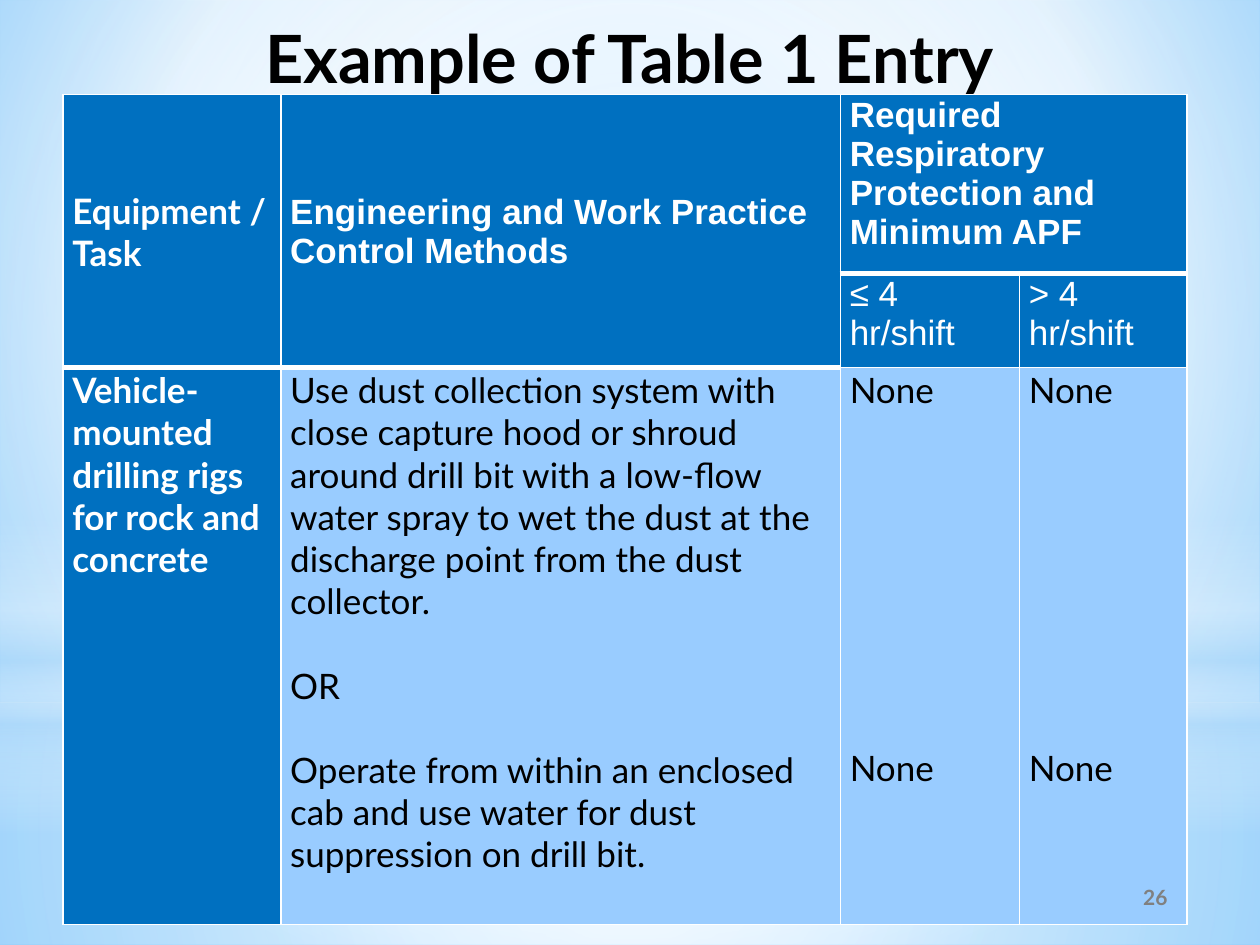
from pptx import Presentation
from pptx.dml.color import RGBColor
from pptx.enum.shapes import MSO_SHAPE
from pptx.enum.text import MSO_ANCHOR, PP_ALIGN
from pptx.oxml import parse_xml
from pptx.oxml.ns import nsdecls, qn
from pptx.util import Cm, Pt

COLORS = {
    "sky": "9ED5FF", "azure": "5BB9FF", "mist": "B4DCFA", "white": "FFFFFF",
    "header": "0070C0", "body": "99CCFF", "ink": "000000", "number": "808080",
}
CENTER_FOCUS = (50, 50, 50, 50)
COLUMNS = (4.39, 11.28, 3.61, 3.38)
ROWS = (3.61, 1.9, 11.23)
LINE = 24


def gradient_xml(stops, focus=None):
    """Return a gradient: circular around a focus, or top to bottom without one."""
    marks = "".join(
        f'<a:gs pos="{place * 1000}"><a:srgbClr val="{COLORS[color]}">'
        f'<a:alpha val="{opacity * 1000}"/></a:srgbClr></a:gs>'
        for place, color, opacity in stops)
    if focus:
        sides = " ".join(f'{side}="{value * 1000}"' for side, value in zip("ltrb", focus))
        course = f'<a:path path="circle"><a:fillToRect {sides}/></a:path>'
    else:
        course = '<a:lin ang="5400000" scaled="0"/>'
    return parse_xml(f'<a:gradFill {nsdecls("a")} rotWithShape="1">'
                     f'<a:gsLst>{marks}</a:gsLst>{course}</a:gradFill>')


def fill_gradient(fill, properties, stops, focus=None):
    """Fill a shape or background with a gradient."""
    fill.solid()
    properties.replace(properties.find(qn("a:solidFill")), gradient_xml(stops, focus))


def add_glow(slide, kind, top, height, stops, focus=None):
    """Add a translucent full-width gradient shape."""
    glow = slide.shapes.add_shape(kind, 0, Cm(top), Cm(25.4), Cm(height))
    glow.shadow.inherit = False
    glow.line.fill.background()
    fill_gradient(glow.fill, glow.element.find(qn("p:spPr")), stops, focus)


def add_backdrop(slide):
    """Paint the background and its layers of light."""
    fill_gradient(slide.background.fill, slide.element.find(".//" + qn("p:bgPr")),
                  ((0, "sky", 100), (60, "white", 100), (100, "azure", 100)),
                  (20, 10, 20, 60))
    add_glow(slide, MSO_SHAPE.RECTANGLE, 14.17, 4.88,
             ((0, "white", 91), (37, "white", 76), (100, "mist", 79)), CENTER_FOCUS)
    add_glow(slide, MSO_SHAPE.RECTANGLE, 0, 14.17,
             ((0, "white", 89), (48, "white", 62), (100, "mist", 79)), CENTER_FOCUS)
    add_glow(slide, MSO_SHAPE.RECTANGLE, 10.46, 6.35,
             ((0, "white", 0), (29, "white", 30), (45, "mist", 40),
              (55, "white", 26), (65, "mist", 60), (100, "white", 0)))
    add_glow(slide, MSO_SHAPE.OVAL, 4.45, 14.17,
             ((0, "white", 100), (56, "white", 0)), CENTER_FOCUS)


def write(frame, text, size=20, font="Lato", color="white", bold=False,
          align=PP_ALIGN.LEFT, gap=0):
    """Write each line of text as a paragraph, with a gap in points between them."""
    frame.word_wrap = True
    for index, line in enumerate(text.split("\n")):
        paragraph = frame.add_paragraph() if index else frame.paragraphs[0]
        paragraph.alignment = align
        if index:
            paragraph.space_before = Pt(gap)
        run = paragraph.add_run()
        run.text = line
        run.font.size, run.font.name, run.font.bold = Pt(size), font, bold
        run.font.color.rgb = RGBColor.from_string(COLORS[color])


def add_label(slide, box, text, **look):
    """Add a vertically centred text box."""
    frame = slide.shapes.add_textbox(*map(Cm, box)).text_frame
    frame.vertical_anchor = MSO_ANCHOR.MIDDLE
    write(frame, text, align=PP_ALIGN.CENTER, **look)


def style_cell(cell, fill, bottom):
    """Set a cell's fill, margins and white borders."""
    cell.fill.solid()
    cell.fill.fore_color.rgb = RGBColor.from_string(COLORS[fill])
    cell.margin_left = cell.margin_right = Cm(0.19)
    cell.margin_top, cell.margin_bottom = Cm(0.03), 0
    properties = cell._tc.get_or_add_tcPr()
    for place, (side, width) in enumerate(zip("LRTB", (1, 1, 1, bottom))):
        properties.insert(place, parse_xml(
            f'<a:ln{side} {nsdecls("a")} w="{Pt(width)}"><a:solidFill>'
            f'<a:srgbClr val="{COLORS["white"]}"/></a:solidFill></a:ln{side}>'))


def add_entry_table(slide):
    """Add the table of control methods and required protection."""
    table = slide.shapes.add_table(len(ROWS), len(COLUMNS), Cm(1.27), Cm(1.9),
                                   Cm(sum(COLUMNS)), Cm(sum(ROWS))).table
    for column, width in zip(table.columns, COLUMNS):
        column.width = Cm(width)
    for row, height in zip(table.rows, ROWS):
        row.height = Cm(height)
    for r in range(len(ROWS)):
        for c in range(len(COLUMNS)):
            heavy = r == 0 or (r == 1 and c < 2)
            style_cell(table.cell(r, c), "body" if r == 2 and c else "header",
                       3 if heavy else 1)
    for start, end in (((0, 0), (1, 0)), ((0, 1), (1, 1)), ((0, 2), (0, 3))):
        table.cell(*start).merge(table.cell(*end))
    for c in (0, 1):
        table.cell(0, c).vertical_anchor = MSO_ANCHOR.MIDDLE

    heading = {"font": "Arial", "bold": True}
    limit = {"font": "Arial"}
    entries = (
        (0, 0, "Equipment / Task", {"bold": True}),
        (0, 1, "Engineering and Work Practice Control Methods", heading),
        (0, 2, "Required Respiratory Protection and\nMinimum APF", heading),
        (1, 2, "≤ 4 hr/shift", limit),
        (1, 3, "> 4 hr/shift", limit),
        (2, 0, "Vehicle-mounted drilling rigs for rock and concrete", {"bold": True}),
        (2, 1, "Use dust collection system with close capture hood or shroud around "
               "drill bit with a low-flow water spray to wet the dust at the discharge "
               "point from the dust collector.\nOR\nOperate from within an enclosed cab "
               "and use water for dust suppression on drill bit.",
         {"color": "ink", "gap": LINE}),
        *((2, c, "None\nNone", {"color": "ink", "gap": 8 * LINE}) for c in (2, 3)),
    )
    for r, c, text, look in entries:
        write(table.cell(r, c).text_frame, text, **look)


def main():
    """Build the slide and save it."""
    deck = Presentation()
    deck.slide_width, deck.slide_height = Cm(25.4), Cm(19.05)
    slide = deck.slides.add_slide(deck.slide_layouts[6])
    add_backdrop(slide)
    add_label(slide, (1.27, 0.2, 22.86, 1.9), "Example of Table 1 Entry",
              size=38, color="ink", bold=True)
    add_entry_table(slide)
    add_label(slide, (20.75, 17.58, 5.08, 1.02), "26",
              size=12, color="number", bold=True)
    deck.save("out.pptx")


if __name__ == "__main__":
    main()
